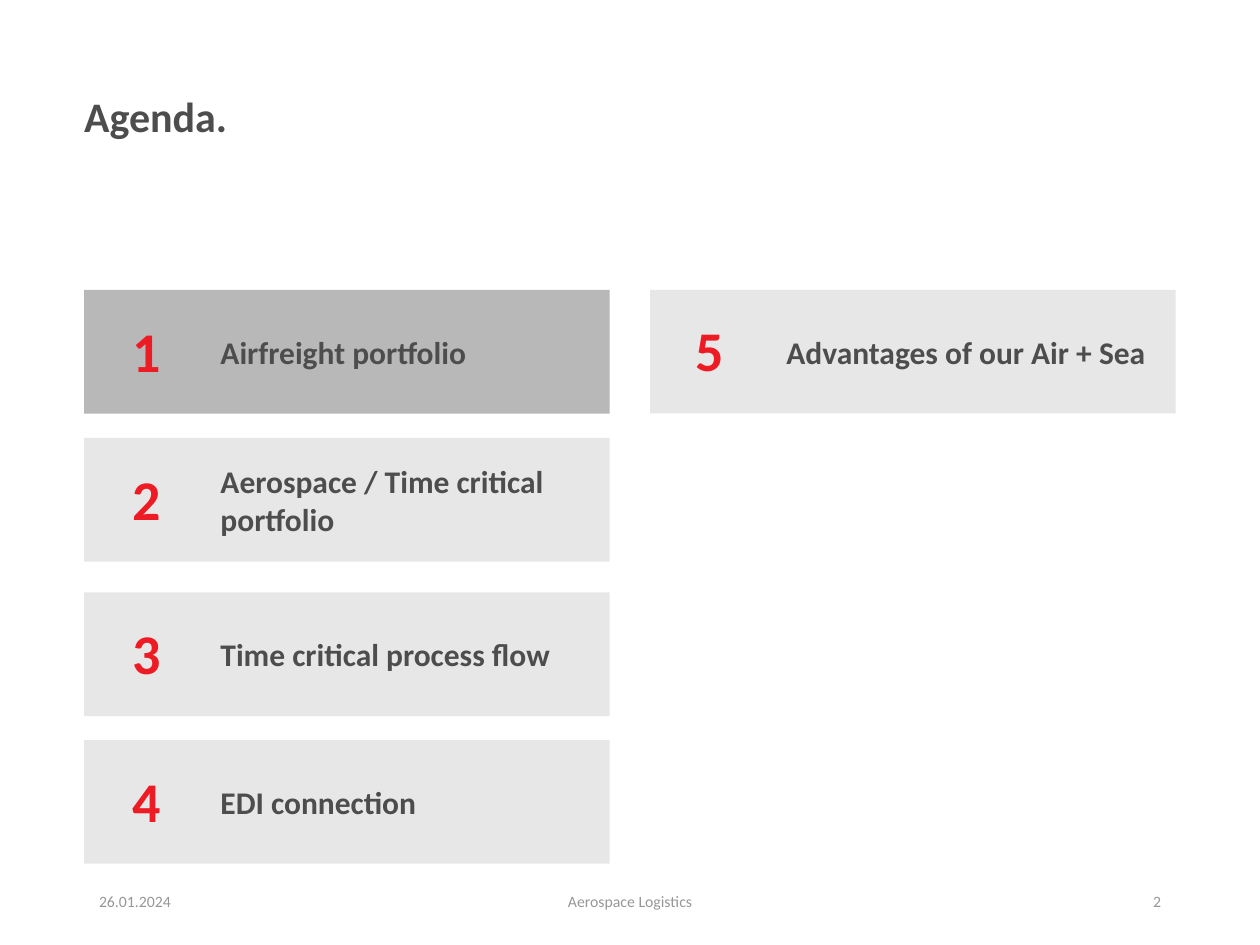
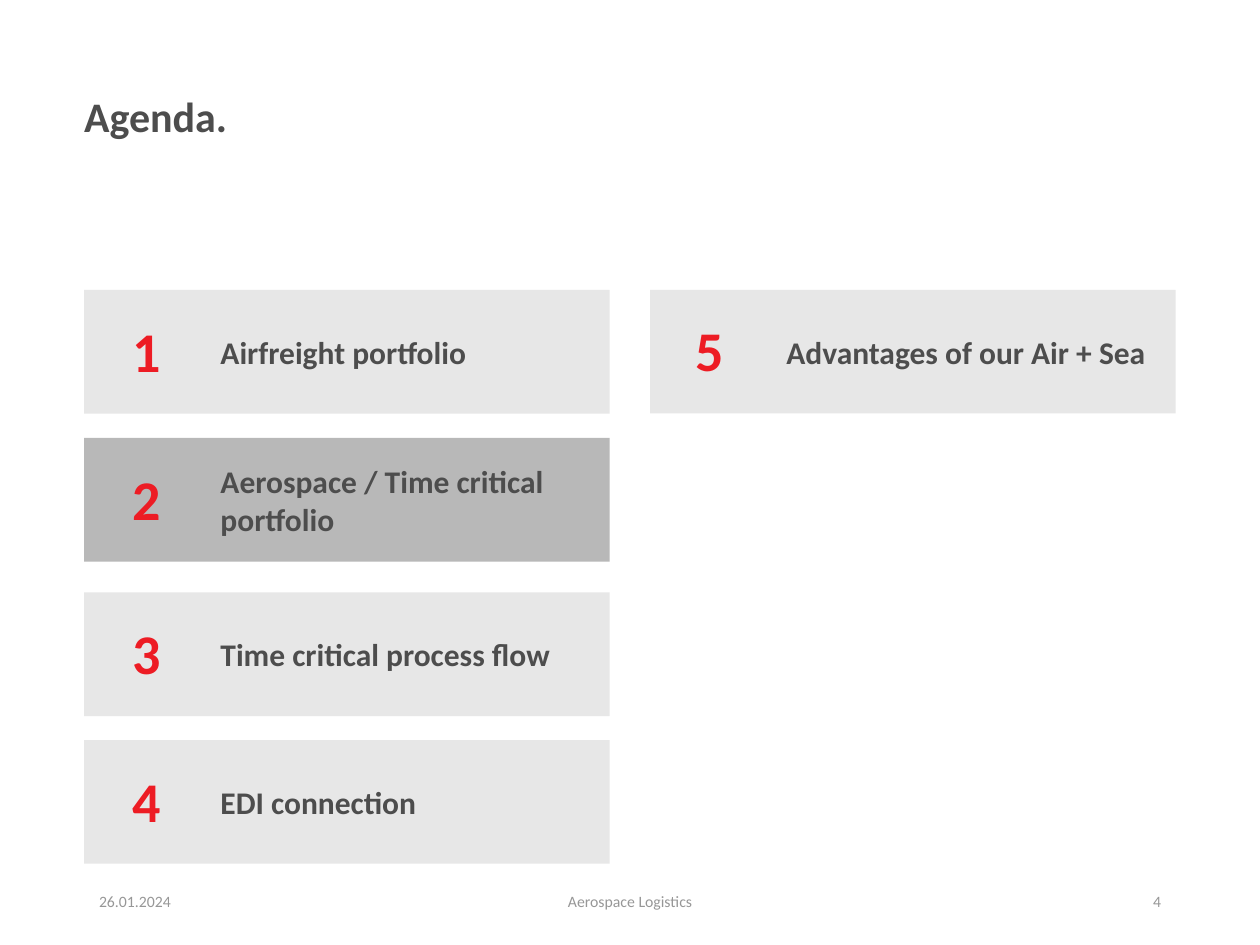
"""Build two agenda slides, each highlighting the current chapter."""
from dataclasses import dataclass

from pptx import Presentation
from pptx.dml.color import RGBColor as Color
from pptx.enum.shapes import MSO_SHAPE as Preset
from pptx.enum.text import MSO_ANCHOR as Anchor, PP_ALIGN as Align
from pptx.util import Pt


@dataclass(frozen=True)
class Theme:
    font: str = "Calibri"
    ink: str = "4D4D4D"
    accent: str = "ED1C24"
    muted: str = "979797"
    panel: str = "E7E7E7"
    active_panel: str = "B8B8B8"
    title_size: int = 24
    number_size: int = 32
    label_size: int = 18
    footer_size: int = 9


theme = Theme()

PANEL_WIDTH, PANEL_HEIGHT = 300.3, 70.7
LEFT_COLUMN, RIGHT_COLUMN = 48.1, 371.5
NUMBER_WIDTH, NUMBER_HEIGHT, NUMBER_DROP = 71, 46, 11.3
LABEL_INDENT = 70.8
FOOTER_TOP, FOOTER_HEIGHT = 500.5, 28.8

chapters = [
    ("Airfreight portfolio", LEFT_COLUMN, 165.75),
    ("Aerospace / Time critical portfolio", LEFT_COLUMN, 250.3),
    ("Time critical process flow", LEFT_COLUMN, 338.6),
    ("EDI connection", LEFT_COLUMN, 422.9),
    ("Advantages of our Air + Sea", RIGHT_COLUMN, 165.6),
]
agenda_slides = [(1, "2"), (2, "4")]


def write(shape, text, size, color, bold=True, align=Align.LEFT, anchor=Anchor.MIDDLE):
    frame = shape.text_frame
    frame.word_wrap = True
    frame.vertical_anchor = anchor
    paragraph = frame.paragraphs[0]
    paragraph.text = text
    paragraph.alignment = align
    font = paragraph.font
    font.name, font.size, font.bold = theme.font, Pt(size), bold
    font.color.rgb = Color.from_string(color)
    return frame


def add_text(slide, left, top, width, height, *args, **options):
    box = slide.shapes.add_textbox(Pt(left), Pt(top), Pt(width), Pt(height))
    return write(box, *args, **options)


presentation = Presentation()
presentation.slide_width, presentation.slide_height = Pt(720), Pt(540)

for current_chapter, page_number in agenda_slides:
    slide = presentation.slides.add_slide(presentation.slide_layouts[6])

    title = add_text(slide, LEFT_COLUMN, 55.4, 538.6, 25.2, "Agenda.",
                     theme.title_size, theme.ink, anchor=Anchor.BOTTOM)
    title.margin_left = title.margin_right = title.margin_top = title.margin_bottom = 0

    for number, (label, left, top) in enumerate(chapters, start=1):
        panel = slide.shapes.add_shape(Preset.RECTANGLE, Pt(left), Pt(top),
                                       Pt(PANEL_WIDTH), Pt(PANEL_HEIGHT))
        panel.shadow.inherit = False
        panel.line.fill.background()
        panel.fill.solid()
        fill = theme.active_panel if number == current_chapter else theme.panel
        panel.fill.fore_color.rgb = Color.from_string(fill)
        frame = write(panel, label, theme.label_size, theme.ink)
        properties = frame.paragraphs[0]._p.get_or_add_pPr()
        properties.set("marL", str(Pt(LABEL_INDENT)))

        number_left = left - 1.4 if left == RIGHT_COLUMN else left
        add_text(slide, number_left, top + NUMBER_DROP, NUMBER_WIDTH, NUMBER_HEIGHT,
                 str(number), theme.number_size, theme.accent,
                 align=Align.CENTER, anchor=Anchor.TOP)

    footers = [
        ("26.01.2024", 49.5, 162, Align.LEFT),
        ("Aerospace Logistics", 238.5, 243, Align.CENTER),
        (page_number, 508.5, 162, Align.RIGHT),
    ]
    for text, left, width, align in footers:
        add_text(slide, left, FOOTER_TOP, width, FOOTER_HEIGHT, text,
                 theme.footer_size, theme.muted, bold=False, align=align)

presentation.save("out.pptx")
